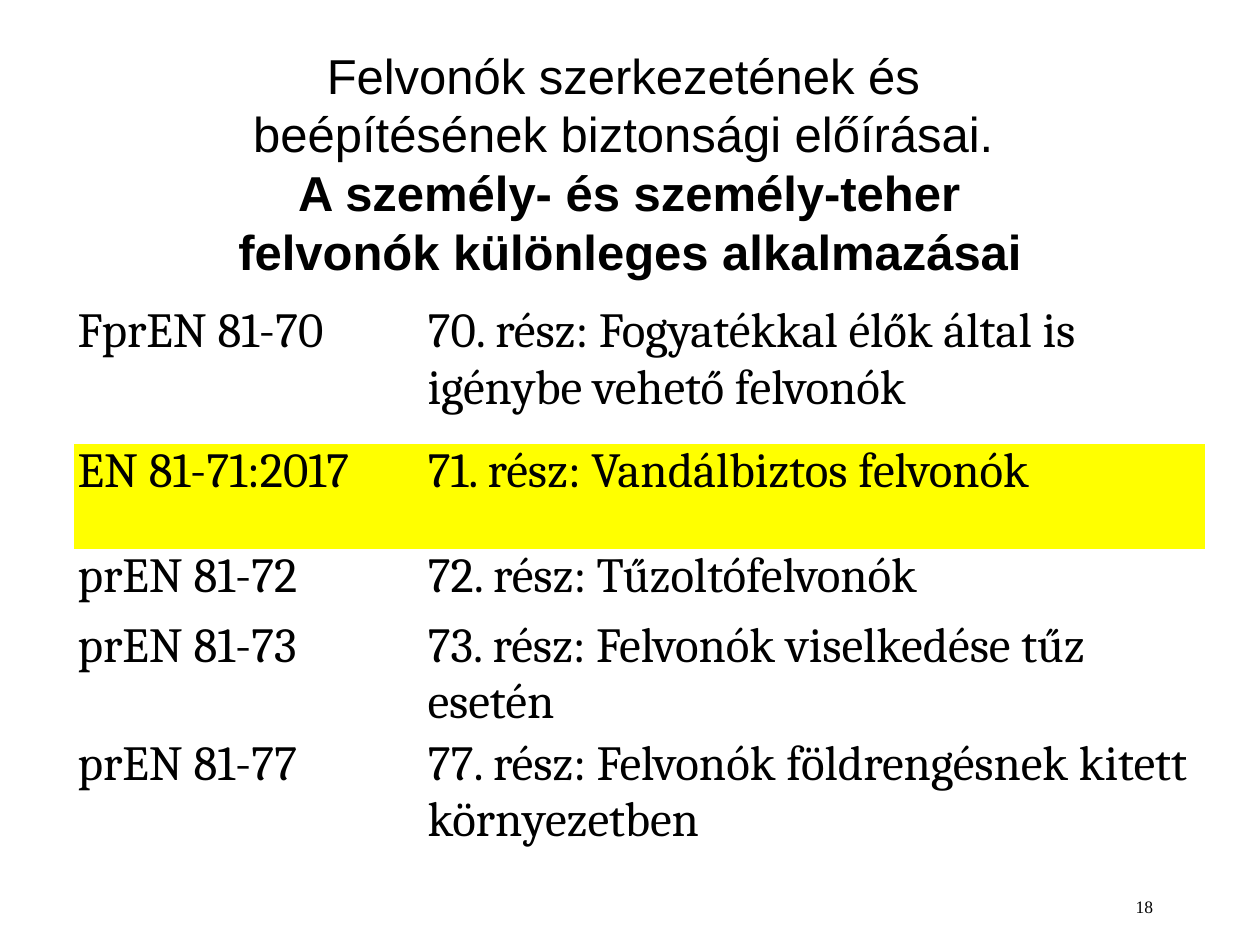
"""Build the slide listing the special-application parts of the EN 81 lift standards."""
from pptx import Presentation
from pptx.dml.color import RGBColor as RGB
from pptx.enum.text import MSO_ANCHOR as Anchor, MSO_AUTO_SIZE as Fit, PP_ALIGN as Align
from pptx.oxml.ns import qn
from pptx.util import Pt

TITLE = [
    ("Felvonók szerkezetének és ", False),
    ("beépítésének biztonsági előírásai. ", False),
    (" A személy- és személy-teher ", True),
    ("felvonók különleges alkalmazásai", True),
]
PARTS = [
    ("FprEN 81-70", "70. rész: Fogyatékkal élők által is igénybe vehető felvonók", 80),
    ("EN 81-71:2017", "71. rész: Vandálbiztos felvonók", 60),
    ("prEN 81-72", "72. rész: Tűzoltófelvonók", 40),
    ("prEN 81-73", "73. rész: Felvonók viselkedése tűz esetén", 60),
    ("prEN 81-77", "77. rész: Felvonók földrengésnek kitett környezetben", 80),
]
MARKED = "EN 81-71:2017"
PAGE = "18"
COLS = (200, 446.4)
BOXES = {
    "title": (54, 48, 612, 90),
    "table": (42.4, 173.5, sum(COLS), sum(part[-1] for part in PARTS)),
    "page": (516, 508.3, 150, 20),
}
THEME = {
    "ink": RGB(0, 0, 0),
    "mark": RGB(255, 255, 0),
    "title": {"name": "Arial", "size": Pt(28)},
    "cell": {"name": "Cambria", "size": Pt(28), "bold": False},
    "page": {"name": "Times New Roman", "size": Pt(10)},
}
PLAIN = "{2D5ABB26-0587-4C30-8999-92F81FD0307C}"


def put(item, vals):
    for key, val in vals.items():
        setattr(item, key, val)


def style(font, kind):
    put(font, THEME[kind])
    font.color.rgb = THEME["ink"]


def place(kind):
    return [Pt(val) for val in BOXES[kind]]


def add_title(slide):
    shape = slide.shapes.title
    put(shape, dict(zip(("left", "top", "width", "height"), place("title"))))
    frame = shape.text_frame
    put(frame, {"word_wrap": True, "auto_size": Fit.NONE, "vertical_anchor": Anchor.MIDDLE})
    para = frame.paragraphs[0]
    para.alignment = Align.CENTER
    for num, (text, bold) in enumerate(TITLE):
        if num:
            para.add_line_break()
        run = para.add_run()
        run.text = text
        style(run.font, "title")
        run.font.bold = bold


def add_page(slide):
    frame = slide.shapes.add_textbox(*place("page")).text_frame
    frame.word_wrap = True
    para = frame.paragraphs[0]
    put(para, {"text": PAGE, "alignment": Align.RIGHT})
    style(para.runs[0].font, "page")


def fill_cell(cell, text, marked):
    put(cell, {"margin_left": Pt(2), "margin_right": Pt(2), "margin_top": 0, "margin_bottom": 0})
    if marked:
        cell.fill.solid()
        cell.fill.fore_color.rgb = THEME["mark"]
    else:
        cell.fill.background()
    para = cell.text_frame.paragraphs[0]
    put(para, {"text": text, "space_after": Pt(6)})
    style(para.runs[0].font, "cell")


def add_parts(slide):
    frame = slide.shapes.add_table(len(PARTS), len(COLS), *place("table"))
    table = frame.table
    put(table, {"first_row": False, "horz_banding": False})
    next(frame.element.iter(qn("a:tableStyleId"))).text = PLAIN
    for col, width in zip(table.columns, COLS):
        col.width = Pt(width)
    for row, (code, name, height) in zip(table.rows, PARTS):
        row.height = Pt(height)
        for cell, text in zip(row.cells, (code, name)):
            fill_cell(cell, text, code == MARKED)


def main():
    deck = Presentation()
    put(deck, {"slide_width": Pt(720), "slide_height": Pt(540)})
    slide = deck.slides.add_slide(deck.slide_layouts[5])
    add_title(slide)
    add_page(slide)
    add_parts(slide)
    deck.save("out.pptx")


if __name__ == "__main__":
    main()
